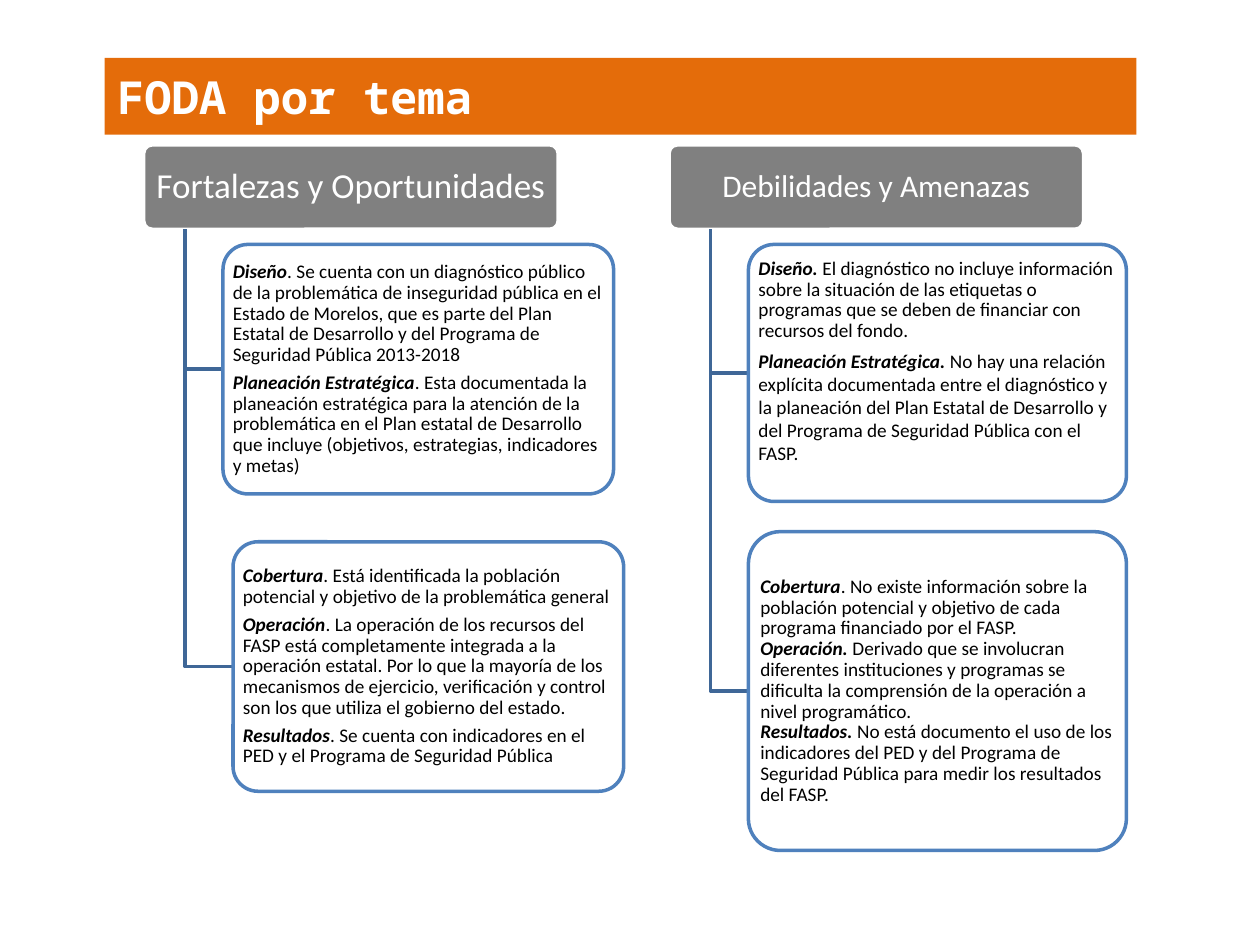
from dataclasses import dataclass

import pptx
import pptx.dml.color
import pptx.enum.shapes
import pptx.enum.text
import pptx.oxml
import pptx.util
from pptx.oxml.ns import qn

# The slide is a grid of 100 columns by 75 rows
SLIDE_WIDTH = pptx.util.Inches(10)
SLIDE_HEIGHT = pptx.util.Inches(7.5)
COLUMN = SLIDE_WIDTH / 100
ROW = SLIDE_HEIGHT / 75

ORANGE, GRAY, WHITE, BLACK = "E46C0A", "808080", "FFFFFF", "000000"
CARD_BLUE, BRANCH_BLUE = "4F81BD", "3F6797"
HEADER_TOP, HEADER_WIDTH, HEADER_HEIGHT = 11.5, 32.9, 6.7
TRUNK_OFFSET = HEADER_WIDTH / 10


@dataclass
class Topic:
    name: str
    text: str
    line_spacing: float = 0.9
    space_after: float = 4


@dataclass
class Card:
    left: float
    top: float
    width: float
    height: float
    topics: list[Topic]
    bottom_margin: float = 0.02


@dataclass
class Branch:
    title: str
    title_size: int
    left: float
    cards: list[Card]


BRANCHES = [
    Branch("Fortalezas y Oportunidades", 20, 11.4, [
        Card(17.7, 19.4, 31, 19.8, [
            Topic("Diseño", ". Se cuenta con un diagnóstico público de la problemática de "
                  "inseguridad pública en el Estado de Morelos, que es parte del Plan Estatal "
                  "de Desarrollo y del Programa de Seguridad Pública 2013-2018"),
            Topic("Planeación Estratégica", ". Esta documentada la planeación estratégica para "
                  "la atención de la problemática en el Plan estatal de Desarrollo que incluye "
                  "(objetivos, estrategias, indicadores y metas)"),
        ]),
        Card(18.5, 43, 31, 19.8, [
            Topic("Cobertura", ". Está identificada la población potencial y objetivo de la "
                  "problemática general"),
            Topic("Operación", ". La operación de los recursos del FASP está completamente "
                  "integrada a la operación estatal. Por lo que la mayoría de los mecanismos de "
                  "ejercicio, verificación y control son los que utiliza el gobierno del estado."),
            Topic("Resultados", ". Se cuenta con indicadores en el PED y el Programa de "
                  "Seguridad Pública"),
        ]),
    ]),
    Branch("Debilidades y Amenazas", 18, 53.1, [
        Card(59.4, 19.4, 30, 20.4, [
            Topic("Diseño. ", "El diagnóstico no incluye información sobre la situación de las "
                  "etiquetas o programas que se deben de financiar con recursos del fondo."),
            Topic("Planeación Estratégica. ", "No hay una relación explícita documentada entre "
                  "el diagnóstico y la planeación del Plan Estatal de Desarrollo y del Programa "
                  "de Seguridad Pública con el FASP.", line_spacing=1, space_after=0),
        ], bottom_margin=0.2),
        Card(59.4, 42.2, 30, 25.3, [
            Topic("Cobertura", ". No existe información sobre la población potencial y objetivo "
                  "de cada programa financiado por el FASP.", space_after=0),
            Topic("Operación. ", "Derivado que se involucran diferentes instituciones y "
                  "programas se dificulta la comprensión de la operación a nivel programático.",
                  space_after=0),
            Topic("Resultados. ", "No está documento el uso de los indicadores del PED y del "
                  "Programa de Seguridad Pública para medir los resultados del FASP."),
        ]),
    ]),
]


def place(column: float, row: float) -> tuple[int, int]:
    return round(column * COLUMN), round(row * ROW)


def color(hex_code: str) -> pptx.dml.color.RGBColor:
    return pptx.dml.color.RGBColor.from_string(hex_code)


def fill_shape(shape, hex_code: str, opacity: int = 100) -> None:
    shape.fill.solid()
    shape.fill.fore_color.rgb = color(hex_code)
    if opacity < 100:
        color_element = shape.fill._xPr.find(qn("a:solidFill"))[0]
        alpha = pptx.oxml.parse_xml(
            '<a:alpha xmlns:a="http://schemas.openxmlformats.org/drawingml/2006/main" '
            f'val="{opacity * 1000}"/>')
        color_element.append(alpha)


def outline_shape(shape, hex_code: str) -> None:
    shape.line.color.rgb = color(hex_code)
    shape.line.width = pptx.util.Pt(2)
    shape.shadow.inherit = False


def format_font(paragraph, name: str, size: float, hex_code: str) -> None:
    paragraph.font.name = name
    paragraph.font.size = pptx.util.Pt(size)
    paragraph.font.color.rgb = color(hex_code)


def add_rounded_box(slide, left: float, top: float, width: float, height: float):
    shape = slide.shapes.add_shape(pptx.enum.shapes.MSO_SHAPE.ROUNDED_RECTANGLE,
                                   *place(left, top), *place(width, height))
    shape.adjustments[0] = 0.1
    frame = shape.text_frame
    frame.word_wrap = True
    frame.vertical_anchor = pptx.enum.text.MSO_ANCHOR.MIDDLE
    frame.margin_left = frame.margin_right = pptx.util.Inches(0.02)
    frame.margin_top = frame.margin_bottom = pptx.util.Inches(0.02)
    return shape


def add_title(slide, text: str) -> None:
    title = slide.shapes.title
    title.left, title.top = place(8.3, 4.6)
    title.width, title.height = place(81.9, 6.1)
    fill_shape(title, ORANGE)
    frame = title.text_frame
    frame.text = text
    frame.auto_size = pptx.enum.text.MSO_AUTO_SIZE.NONE
    frame.vertical_anchor = pptx.enum.text.MSO_ANCHOR.MIDDLE
    paragraph = frame.paragraphs[0]
    paragraph.alignment = pptx.enum.text.PP_ALIGN.LEFT
    format_font(paragraph, "Noto Sans Mono", 26, WHITE)
    paragraph.font.bold = True


def add_header(slide, branch: Branch) -> None:
    header = add_rounded_box(slide, branch.left, HEADER_TOP, HEADER_WIDTH, HEADER_HEIGHT)
    fill_shape(header, GRAY)
    outline_shape(header, WHITE)
    paragraph = header.text_frame.paragraphs[0]
    paragraph.text = branch.title
    paragraph.alignment = pptx.enum.text.PP_ALIGN.CENTER
    paragraph.line_spacing = 0.9
    format_font(paragraph, "Calibri", branch.title_size, WHITE)


def add_elbow(slide, trunk: float, card: Card) -> None:
    middle = card.top + card.height / 2
    builder = slide.shapes.build_freeform(*place(trunk, HEADER_TOP + HEADER_HEIGHT))
    builder.add_line_segments([place(trunk, middle), place(card.left, middle)], close=False)
    elbow = builder.convert_to_shape()
    elbow.fill.background()
    outline_shape(elbow, BRANCH_BLUE)


def add_card(slide, card: Card) -> None:
    box = add_rounded_box(slide, card.left, card.top, card.width, card.height)
    fill_shape(box, WHITE, opacity=90)
    outline_shape(box, CARD_BLUE)
    frame = box.text_frame
    frame.margin_bottom = pptx.util.Inches(card.bottom_margin)
    for index, topic in enumerate(card.topics):
        paragraph = frame.add_paragraph() if index else frame.paragraphs[0]
        paragraph.alignment = pptx.enum.text.PP_ALIGN.LEFT
        paragraph.line_spacing = topic.line_spacing
        paragraph.space_after = pptx.util.Pt(topic.space_after)
        format_font(paragraph, "Calibri", 11, BLACK)
        name = paragraph.add_run()
        name.text = topic.name
        name.font.bold = name.font.italic = True
        paragraph.add_run().text = topic.text


def main() -> None:
    presentation = pptx.Presentation()
    presentation.slide_width, presentation.slide_height = SLIDE_WIDTH, SLIDE_HEIGHT
    slide = presentation.slides.add_slide(presentation.slide_layouts[5])
    add_title(slide, "FODA por tema")
    # Each branch: a header, then its cards hanging from one trunk
    for branch in BRANCHES:
        add_header(slide, branch)
        for card in branch.cards:
            add_elbow(slide, branch.left + TRUNK_OFFSET, card)
            add_card(slide, card)
    presentation.save("out.pptx")


if __name__ == "__main__":
    main()
